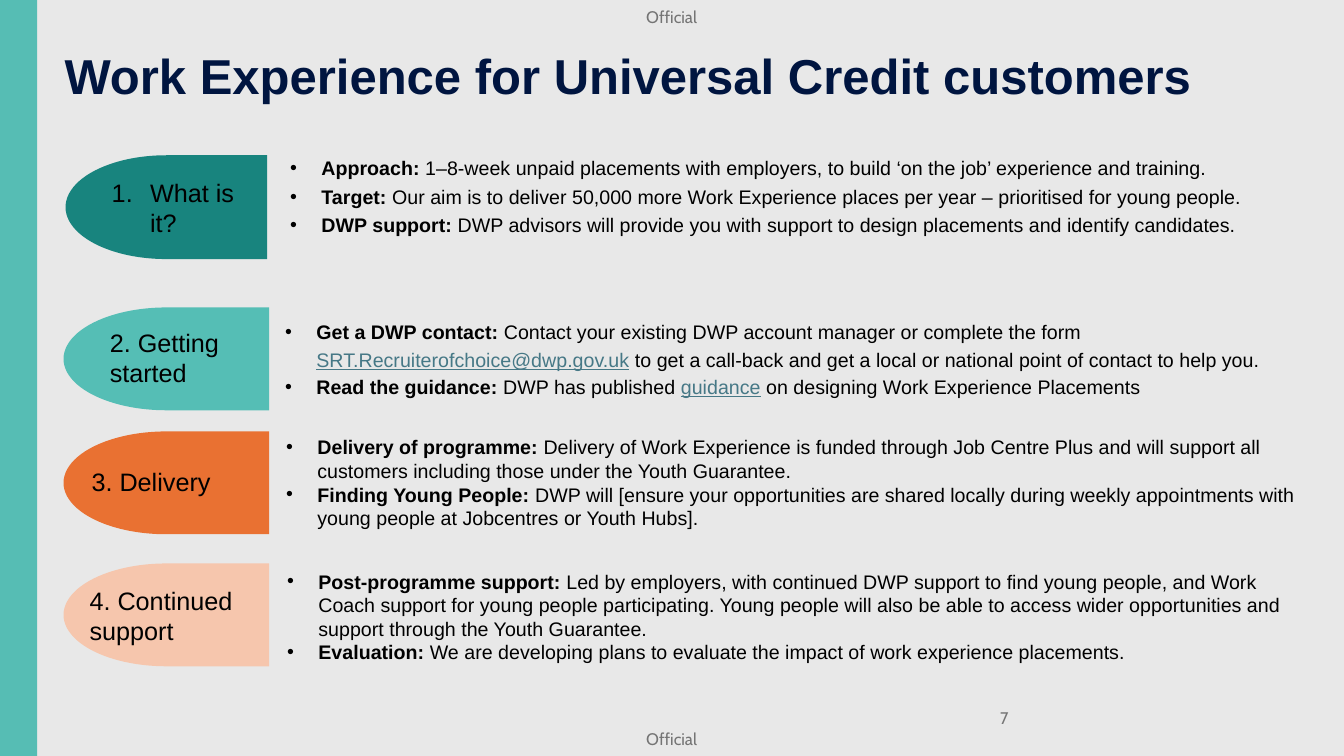
from pptx import Presentation
from pptx.dml.color import RGBColor
from pptx.enum.shapes import MSO_SHAPE
from pptx.enum.text import MSO_ANCHOR, PP_ALIGN
from pptx.oxml.ns import qn
from pptx.util import Inches, Pt
from lxml import etree

RECTANGLE = MSO_SHAPE.RECTANGLE
DELAY = MSO_SHAPE.FLOWCHART_DELAY
TOP, MIDDLE, BOTTOM = MSO_ANCHOR.TOP, MSO_ANCHOR.MIDDLE, MSO_ANCHOR.BOTTOM
LEFT = PP_ALIGN.LEFT

COLORS = {
    "background": "E8E8E8", "bar": "56BDB4", "title": "001540",
    "text": "000000", "link": "467886", "marking": "747474", "number": "757575",
    "what": "18847E", "started": "55BEB5", "delivery": "E97132", "support": "F6C6AD",
}


def write_text(shape, paragraphs, size=14, font="Arial", color="text", bold=False,
               anchor=TOP, insets=(0.1, 0.05), wrap=True, bullet=None, indent=0.31,
               space_before=0, line_spacing=None):
    """Fill a shape; each paragraph is a list of (text, style) runs."""
    frame = shape.text_frame
    frame.word_wrap = wrap
    frame.vertical_anchor = anchor
    frame.margin_left = frame.margin_right = Inches(insets[0])
    frame.margin_top = frame.margin_bottom = Inches(insets[1])
    for index, runs in enumerate(paragraphs):
        paragraph = frame.add_paragraph() if index else frame.paragraphs[0]
        paragraph.alignment = LEFT
        if line_spacing:
            paragraph.line_spacing = Pt(line_spacing)
        if index and space_before:
            paragraph.space_before = Pt(space_before)
        if bullet:
            properties = paragraph._p.get_or_add_pPr()
            properties.set("marL", str(Inches(indent)))
            properties.set("indent", str(-Inches(indent)))
            if bullet == "number":
                etree.SubElement(properties, qn("a:buAutoNum"), type="arabicPeriod")
            else:
                etree.SubElement(properties, qn("a:buFont"), typeface="Arial")
                etree.SubElement(properties, qn("a:buChar"), char=bullet)
        for text, style in runs:
            run = paragraph.add_run()
            run.text = text
            run.font.name = font
            run.font.size = Pt(size)
            run.font.bold = bold or style == "bold"
            run.font.underline = style == "link"
            run_color = "link" if style == "link" else color
            run.font.color.rgb = RGBColor.from_string(COLORS[run_color])


def add_block(preset, box, color, rotation=0):
    shape = slide.shapes.add_shape(preset, *map(Inches, box))
    shape.shadow.inherit = False
    shape.rotation = rotation
    shape.fill.solid()
    shape.fill.fore_color.rgb = RGBColor.from_string(COLORS[color])
    shape.line.fill.background()


presentation = Presentation()
presentation.slide_width = Inches(13.33)
presentation.slide_height = Inches(7.5)
slide = presentation.slides.add_slide(presentation.slide_layouts[5])
slide.background.fill.solid()
slide.background.fill.fore_color.rgb = RGBColor.from_string(COLORS["background"])

# Side bar
add_block(RECTANGLE, (0, 0, 0.37, 7.5), "bar")

# Title
title = slide.shapes.title
title.left, title.top = Inches(0.54), Inches(0.38)
title.width, title.height = Inches(12.57), Inches(0.71)
write_text(title, [[("Work Experience for Universal Credit customers", "bold")]],
           size=35, color="title", bold=True, anchor=BOTTOM)

# Page markings and slide number
for top in (0.07, 7.23):
    marking = slide.shapes.add_textbox(Inches(6.41), Inches(top), Inches(0.56), Inches(0.2))
    write_text(marking, [[("Official", "plain")]], size=12, font="Cabin",
               color="marking", insets=(0, 0), wrap=False)
number = slide.shapes.add_textbox(Inches(9.87), Inches(6.92), Inches(3.11), Inches(0.4))
write_text(number, [[("7", "plain")]], size=12, font="Cabin", color="number",
           anchor=MIDDLE, insets=(0.05, 0.05))

# Sections: tab, heading and bullets, each with its own box
sections = [
    {
        "color": "what", "tab": (0.65, 1.54, 2, 1.03),
        "heading": "What is it?", "heading_box": (1.01, 1.71, 1.61, 0.71),
        "heading_format": {"bullet": "number", "indent": 0.38},
        "body_box": (2.78, 1.5, 10.31, 1.83), "body_format": {"space_before": 3.5},
        "body": [
            [("Approach: ", "bold"),
             ("1–8-week unpaid placements with employers, to build ‘on the job’ "
              "experience and training.", "plain")],
            [("Target: ", "bold"),
             ("Our aim is to deliver 50,000 more Work Experience places per year – "
              "prioritised for young people.", "plain")],
            [("DWP support: ", "bold"),
             ("DWP advisors will provide you with support to design placements and "
              "identify candidates.", "plain")],
        ],
    },
    {
        "color": "started", "tab": (0.63, 3.05, 2.04, 1.02),
        "heading": "2. Getting started", "heading_box": (0.99, 3.2, 1.61, 0.71),
        "heading_format": {},
        "body_box": (2.73, 3.09, 10.36, 0.93), "body_format": {"line_spacing": 19.5},
        "body": [
            [("Get a DWP contact: ", "bold"),
             ("Contact your existing DWP account manager or complete the form ", "plain"),
             ("SRT.Recruiterofchoice@dwp.gov.uk", "link"),
             (" to get a call-back and get a local or national point of contact "
              "to help you.", "plain")],
            [("Read the guidance: ", "bold"), ("DWP has published ", "plain"),
             ("guidance", "link"), (" on designing Work Experience Placements", "plain")],
        ],
    },
    {
        "color": "delivery", "tab": (0.63, 4.28, 2.04, 1.02),
        "heading": "3. Delivery", "heading_box": (0.81, 4.58, 2, 0.4),
        "heading_format": {},
        "body_box": (2.74, 4.27, 10.36, 1.04), "body_format": {},
        "body": [
            [("Delivery of programme: ", "bold"),
             ("Delivery of Work Experience is funded through Job Centre Plus and will "
              "support all customers including those under the Youth Guarantee.", "plain")],
            [("Finding Young People: ", "bold"),
             ("DWP will [ensure your opportunities are shared locally during weekly "
              "appointments with young people at Jobcentres or Youth Hubs].", "plain")],
        ],
    },
    {
        "color": "support", "tab": (0.63, 5.59, 2.04, 1.02),
        "heading": "4. Continued support", "heading_box": (0.79, 5.76, 2, 0.71),
        "heading_format": {},
        "body_box": (2.75, 5.6, 10.16, 1.04), "body_format": {},
        "body": [
            [("Post-programme support: ", "bold"),
             ("Led by employers, with continued DWP support to find young people, and "
              "Work Coach support for young people participating. Young people will also "
              "be able to access wider opportunities and support through the Youth "
              "Guarantee.", "plain")],
            [("Evaluation: ", "bold"),
             ("We are developing plans to evaluate the impact of work experience "
              "placements.", "plain")],
        ],
    },
]
for section in sections:
    add_block(DELAY, section["tab"], section["color"], rotation=180)
    heading = slide.shapes.add_textbox(*map(Inches, section["heading_box"]))
    write_text(heading, [[(section["heading"], "plain")]], size=18,
               **section["heading_format"])
    body = slide.shapes.add_textbox(*map(Inches, section["body_box"]))
    write_text(body, section["body"], bullet="•", **section["body_format"])

presentation.save("out.pptx")
